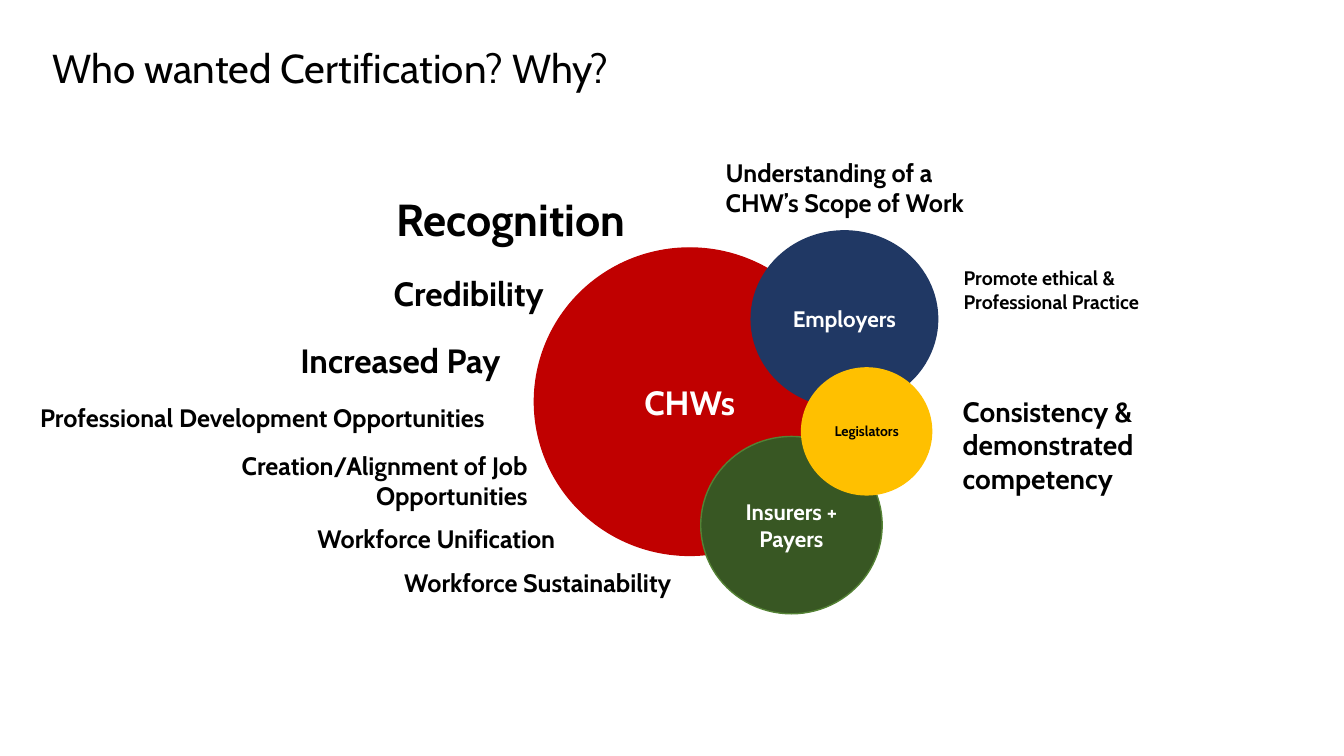
from pptx import Presentation
from pptx import util as u
from pptx.dml import color
from pptx.enum import shapes, text

EMU_PER_PX = 9144  # 100 px to the inch
FONT = "Cabin"
BLACK, WHITE = "000000", "FFFFFF"
LEFT, CENTER, RIGHT = text.PP_ALIGN.LEFT, text.PP_ALIGN.CENTER, text.PP_ALIGN.RIGHT
CONNECTOR = shapes.MSO_SHAPE.FLOWCHART_CONNECTOR
OVAL = shapes.MSO_SHAPE.OVAL

# Groups: box, preset, fill, line, label, size, text colour
GROUPS = [
    ((530, 246, 308, 305), CONNECTOR, "C00000", "C00000", "CHWs", 24, WHITE),
    ((745, 229, 185, 175), CONNECTOR, "203864", "203864", "Employers", 16, WHITE),
    ((695, 433, 180, 176), CONNECTOR, "385723", "548235", "Insurers +\nPayers", 16, WHITE),
    ((795, 365, 129, 126), OVAL, "FFC000", "FFC000", "Legislators", 10, BLACK),
]

# Reasons: box, wording, size, alignment
REASONS = [
    ((383, 185, 277, 64), "Recognition", 32, LEFT),
    ((364, 266, 185, 50), "Credibility", 24, RIGHT),
    ((288, 332, 285, 50), "Increased Pay", 24, LEFT),
    ((30, 394, 499, 40), "Professional Development Opportunities", 18, LEFT),
    ((114, 442, 419, 71), "Creation/Alignment of Job Opportunities", 18, RIGHT),
    ((305, 514, 286, 40), "Workforce Unification", 18, LEFT),
    ((391, 558, 380, 40), "Workforce Sustainability", 18, LEFT),
    ((710, 151, 277, 71), "Understanding of a CHW’s Scope of Work", 18, LEFT),
    ((946, 259, 334, 57), "Promote ethical &\nProfessional Practice", 14, LEFT),
    ((945, 386, 244, 111), "Consistency & demonstrated competency", 20, LEFT),
]


def px(*lengths):
    return [u.Emu(n * EMU_PER_PX) for n in lengths]


def rgb(value):
    return color.RGBColor.from_string(value)


def write(tf, wording, align, hex_color, **font):
    """Write one paragraph per line of the wording."""
    tf.word_wrap = True
    for i, line in enumerate(wording.split("\n")):
        p = tf.add_paragraph() if i else tf.paragraphs[0]
        p.alignment = align
        r = p.add_run()
        r.text = line
        for name, value in {"name": FONT, "bold": True, **font}.items():
            setattr(r.font, name, value)
        r.font.color.rgb = rgb(hex_color)


def add_circle(s, box, preset, fill, line, label, size, hex_color):
    sp = s.shapes.add_shape(preset, *px(*box))
    sp.shadow.inherit = False
    sp.fill.solid()
    sp.fill.fore_color.rgb = rgb(fill)
    sp.line.color.rgb = rgb(line)
    sp.line.width = u.Pt(1)
    sp.text_frame.vertical_anchor = text.MSO_ANCHOR.MIDDLE
    write(sp.text_frame, label, CENTER, hex_color, size=u.Pt(size))


def add_text(s, box, wording, size, align=LEFT, bold=True):
    tf = s.shapes.add_textbox(*px(*box)).text_frame
    write(tf, wording, align, BLACK, size=u.Pt(size), bold=bold)
    return tf


def main():
    prs = Presentation()
    prs.slide_width, prs.slide_height = px(1333, 750)
    s = prs.slides.add_slide(prs.slide_layouts[6])

    # Title
    tf = add_text(s, (42, 24, 618, 91), "Who wanted Certification? Why?", 28.8, bold=False)
    tf.vertical_anchor = text.MSO_ANCHOR.MIDDLE
    tf.paragraphs[0].line_spacing = 0.9

    # Overlapping groups
    for group in GROUPS:
        add_circle(s, *group)

    # Reasons around them
    for reason in REASONS:
        add_text(s, *reason)

    prs.save("out.pptx")


if __name__ == "__main__":
    main()
